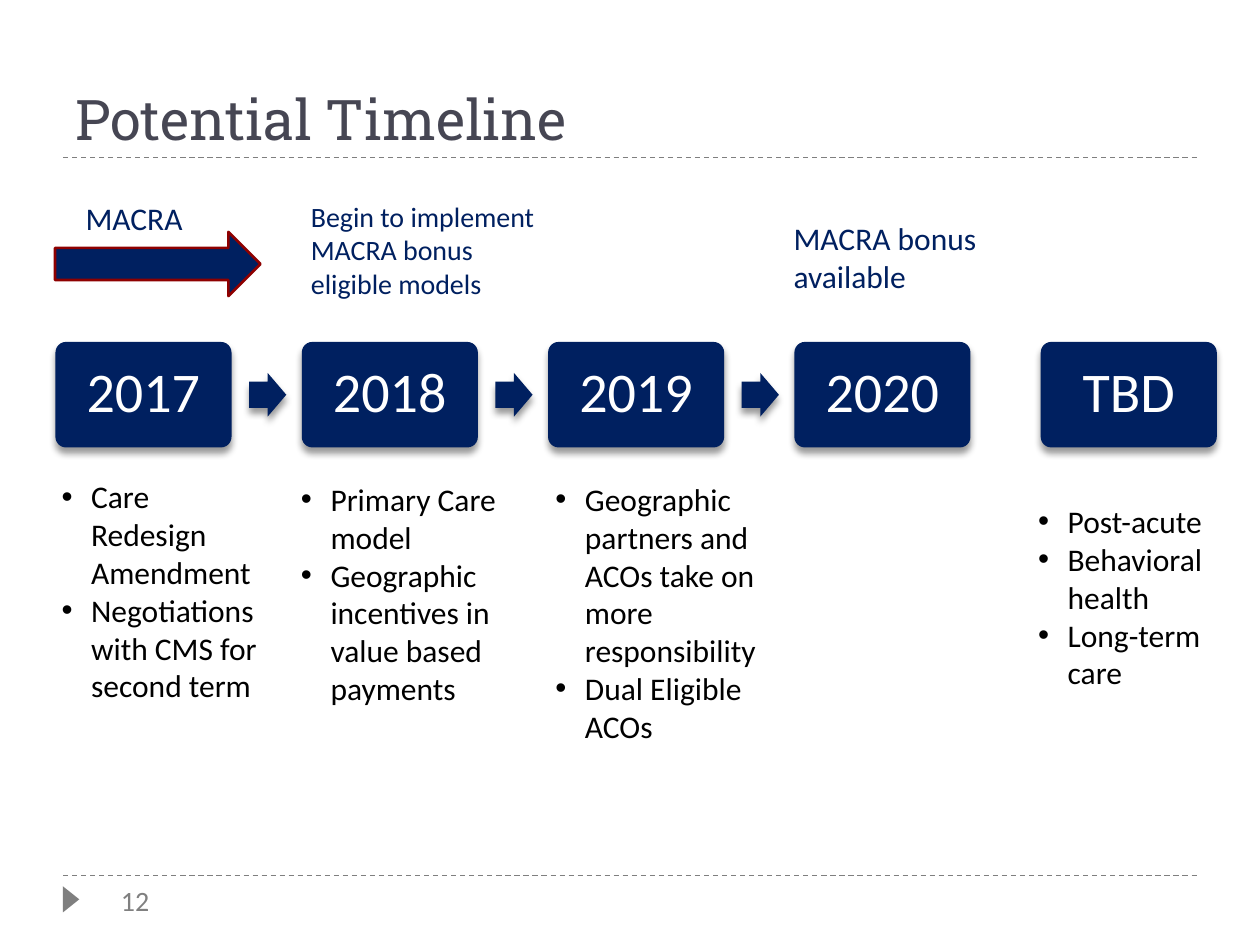
from lxml import etree
from pptx import Presentation
from pptx.dml.color import RGBColor
from pptx.enum import dml, shapes, text
from pptx.oxml import ns, parse_xml
from pptx.util import Pt

NAVY = RGBColor(0x00, 0x20, 0x60)
RED = RGBColor(0x8E, 0x00, 0x00)
SLATE = RGBColor(0x46, 0x46, 0x53)
GRAY = RGBColor(0x7F, 0x7F, 0x7F)
NUMBER_GRAY = RGBColor(0x80, 0x80, 0x80)
BLACK = RGBColor(0, 0, 0)
WHITE = RGBColor(0xFF, 0xFF, 0xFF)
SHADOW = (
    f'<a:effectLst {ns.nsdecls("a")}>'
    '<a:outerShdw blurRad="50800" dist="43180" dir="5400000" rotWithShape="0">'
    '<a:srgbClr val="000000"><a:alpha val="40000"/></a:srgbClr>'
    '</a:outerShdw></a:effectLst>'
)

presentation = Presentation()
presentation.slide_width = Pt(720)
presentation.slide_height = Pt(540)
slide = presentation.slides.add_slide(presentation.slide_layouts[6])


def add_text(box, lines, size, color, font="Calibri", bullets=False, wrap=True,
             anchor=text.MSO_ANCHOR.TOP):
    shape = slide.shapes.add_textbox(*[Pt(length) for length in box])
    frame = shape.text_frame
    frame.word_wrap = wrap
    frame.vertical_anchor = anchor
    for index, line in enumerate(lines):
        paragraph = frame.paragraphs[0] if index == 0 else frame.add_paragraph()
        run = paragraph.add_run()
        run.text = line
        run.font.size = Pt(size)
        run.font.name = font
        run.font.color.rgb = color
        if bullets:
            properties = paragraph._p.get_or_add_pPr()
            properties.set("marL", str(Pt(16.9)))
            properties.set("indent", str(-Pt(16.9)))
            etree.SubElement(properties, ns.qn("a:buFont")).set("typeface", "Arial")
            etree.SubElement(properties, ns.qn("a:buChar")).set("char", "•")


def add_block(kind, box, color, shadow=False):
    shape = slide.shapes.add_shape(kind, *[Pt(length) for length in box])
    shape.shadow.inherit = False
    shape.fill.solid()
    shape.fill.fore_color.rgb = color
    shape.line.fill.background()
    if shadow:
        properties = shape._element.spPr
        properties.replace(properties.find(ns.qn("a:effectLst")), parse_xml(SHADOW))
    return shape


for y in (500.4, 90):
    rule = slide.shapes.add_connector(shapes.MSO_CONNECTOR.STRAIGHT, Pt(36), Pt(y), Pt(684), Pt(y))
    rule.line.color.rgb = GRAY
    rule.line.width = Pt(0.75)
    rule.line.dash_style = dml.MSO_LINE.DASH
    etree.SubElement(rule._element.spPr, ns.qn("a:effectLst"))

page_marker = add_block(shapes.MSO_SHAPE.ISOSCELES_TRIANGLE, (33.1, 509.2, 15, 9.4), GRAY)
page_marker.rotation = 90
add_text((62, 501.1, 34, 26.6), ["12"], 16, NUMBER_GRAY, wrap=False)
add_text((36, 12.2, 648, 77.8), ["Potential Timeline"], 32, SLATE,
         font="Roboto Slab", anchor=text.MSO_ANCHOR.BOTTOM)

add_text((164.9, 270.7, 140.4, 138.2),
         ["Primary Care model", "Geographic incentives in value based payments"],
         18, BLACK, bullets=True)
add_text((310.3, 270.7, 144, 181.4),
         ["Geographic partners and ACOs take on more responsibility", "Dual Eligible ACOs"],
         18, BLACK, bullets=True)
add_text((28.1, 269.3, 131, 138.2),
         ["Care Redesign Amendment", "Negotiations with CMS for second term"],
         18, BLACK, bullets=True)
add_text((586.1, 276.5, 109.4, 128.9),
         ["Post-acute", "Behavioral health", "Long-term care"],
         18, BLACK, bullets=True, anchor=text.MSO_ANCHOR.MIDDLE)

for index, year in enumerate(["2017", "2018", "2019", "2020", "TBD"]):
    left = 31.7 + index * 140.75
    year_box = add_block(shapes.MSO_SHAPE.ROUNDED_RECTANGLE, (left, 195.4, 100.6, 60.3), NAVY, True)
    year_box.adjustments[0] = 0.1
    frame = year_box.text_frame
    frame.vertical_anchor = text.MSO_ANCHOR.MIDDLE
    paragraph = frame.paragraphs[0]
    paragraph.alignment = text.PP_ALIGN.CENTER
    paragraph.line_spacing = 0.9
    run = paragraph.add_run()
    run.text = year
    run.font.size = Pt(32)
    run.font.name = "Calibri"
    run.font.color.rgb = WHITE
    if index < 3:
        step_arrow = add_block(shapes.MSO_SHAPE.RIGHT_ARROW, (left + 110.6, 213.1, 21.3, 25), NAVY, True)
        step_arrow.adjustments[0] = 0.6

add_text((446.4, 121.7, 136.8, 51.1), ["MACRA bonus", "available"], 18, NAVY)
add_text((170.6, 110.2, 153.4, 65.5), ["Begin to implement MACRA bonus eligible models"], 16, NAVY)
add_text((41.8, 110.2, 84.2, 28.8), ["MACRA"], 18, NAVY, wrap=False)
macra_arrow = add_block(shapes.MSO_SHAPE.RIGHT_ARROW, (31.5, 132.5, 117.4, 36.7), NAVY)
macra_arrow.line.color.rgb = RED
macra_arrow.line.width = Pt(1.5)

presentation.save("out.pptx")
